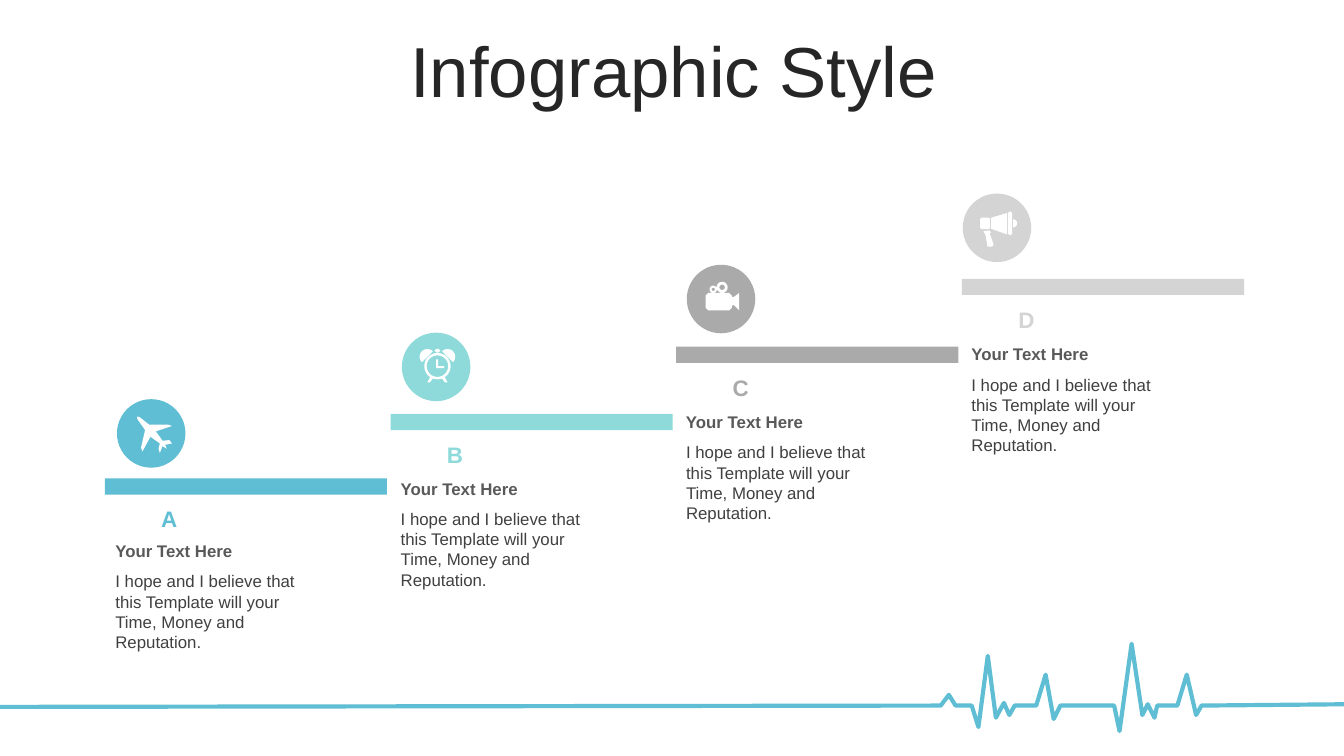
from math import cos, radians, sin

from lxml.etree import SubElement
from pptx import Presentation
from pptx.dml.color import RGBColor
from pptx.enum.shapes import MSO_SHAPE
from pptx.enum.text import MSO_ANCHOR, MSO_AUTO_SIZE, PP_ALIGN
from pptx.oxml.ns import qn
from pptx.util import Inches, Pt

BLUE = RGBColor(0x60, 0xBE, 0xD4)
AQUA = RGBColor(0x8E, 0xDA, 0xDA)
GRAY = RGBColor(0xAA, 0xAA, 0xAA)
SILVER = RGBColor(0xD4, 0xD4, 0xD4)
WHITE = RGBColor(0xFF, 0xFF, 0xFF)
TITLE_COLOR = RGBColor(0x26, 0x26, 0x26)
HEADING_COLOR = RGBColor(0x59, 0x59, 0x59)
BODY_COLOR = RGBColor(0x40, 0x40, 0x40)

# The grid has 100 columns; its cells are square
COLUMNS, ROWS = 100, 56.25
CELL = Inches(0.1)
BODY = "I hope and I believe that this Template will your Time, Money and Reputation."


def cells(count):
    return round(count * CELL)


def arc(x, y, radius, start=0, end=360):
    """Points along an arc, angles in degrees clockwise from the right."""
    angles = [radians(start + (end - start) * i / 36) for i in range(37)]
    return [(x + radius * cos(angle), y + radius * sin(angle)) for angle in angles]


def box(left, top, right, bottom, cut=0.1):
    """A rectangle with slightly cut corners."""
    return [(left + cut, top), (right - cut, top), (right, top + cut),
            (right, bottom - cut), (right - cut, bottom), (left + cut, bottom),
            (left, bottom - cut), (left, top + cut)]


# Icon outlines in cells, measured from the centre of the disc
PLANE = [[(1.55, 0.75), (1.05, 0.85), (1.15, 1.15), (0.85, 0.95), (0.65, 1.45),
          (0.55, 1.15), (0.65, 0.75), (-0.05, 0.25), (-0.65, 1.35), (-0.75, 1.05),
          (-0.45, -0.25), (-1.05, -1.1), (-1.05, -1.25), (-0.85, -1.2),
          (-0.15, -0.65), (1.25, -0.65), (1.55, -0.55), (0.35, -0.15),
          (0.85, 0.55), (1.35, 0.5)]]
CLOCK = [
    arc(0.1, -0.05, 0.98), arc(0.1, -0.05, 0.8),
    arc(-0.65, -0.75, 0.57, 135, 315), arc(0.85, -0.75, 0.57, -135, 45),
    [(0, -0.55), (0.15, -0.55), (0.15, -0.05), (0.6, -0.05), (0.6, 0.1), (0, 0.1)],
    [(0.65, 0.78), (0.85, 1.15), (0.65, 1.15), (0.45, 0.88)],
    [(-0.45, 0.78), (-0.65, 1.15), (-0.45, 1.15), (-0.25, 0.88)],
    box(-0.1, -1.33, 0.3, -1.08),
]
CAMERA = [
    arc(-0.58, -0.72, 0.27), arc(-0.58, -0.72, 0.12),
    arc(0.08, -0.87, 0.41), arc(0.08, -0.87, 0.2),
    box(-1.15, -0.45, 0.8, 0.85, 0.2),
    [(0.8, -0.15), (0.95, -0.15), (1.35, -0.45), (1.35, 0.85), (0.95, 0.45), (0.8, 0.5)],
]
MEGAPHONE = [
    [(-0.55, 0.2), (-0.45, 0.35), (-0.55, 0.4), (-0.25, 1.25), (-0.35, 1.4),
     (-0.7, 1.4), (-0.85, 0.55), (-1, 0.25)],
    box(-1.25, -0.75, -0.5, 0.1),
    [(-0.43, -0.75), (0.75, -1.1), (0.75, 0.5), (-0.43, 0.08)],
    box(0.83, -1.2, 1.12, 0.55),
    arc(1.2, -0.33, 0.3, -90, 90),
]
HEARTBEAT = [(100, 52.4), (89.4, 52.5), (89, 53.2), (88.3, 50.2), (87.6, 52.5),
             (86.1, 52.5), (85.9, 53.4), (85.4, 52.4), (85, 53.2), (84.2, 47.9),
             (83.3, 54.4), (82.9, 52.5), (78.9, 52.5), (78.4, 53.5), (77.8, 50.2),
             (77.1, 52.5), (75.5, 52.5), (75.1, 53.2), (74.7, 52.3), (74.1, 53.4),
             (73.5, 48.8), (72.8, 54.1), (72.3, 52.5), (71.1, 52.5), (70.6, 51.7),
             (70, 52.5), (-0.2, 52.6)]


class StepSlide:
    font = "Arial"
    disc_size = 5.1

    def __init__(self, presentation):
        self.slide = presentation.slides.add_slide(presentation.slide_layouts[5])
        self.shapes = self.slide.shapes

    def format_text(self, frame, text, size, color, bold=False, align=PP_ALIGN.LEFT):
        frame.text = text
        frame.word_wrap = True
        paragraph = frame.paragraphs[0]
        paragraph.alignment = align
        font = paragraph.runs[0].font
        font.name, font.size, font.bold = self.font, Pt(size), bold
        font.color.rgb = color
        return paragraph

    def set_insets(self, frame):
        frame.margin_left = frame.margin_right = Inches(0.07)
        frame.margin_top = frame.margin_bottom = Inches(0.04)

    def title(self, text, left, top, width, height):
        shape = self.shapes.title
        shape.left, shape.top = cells(left), cells(top)
        shape.width, shape.height = cells(width), cells(height)
        frame = shape.text_frame
        paragraph = self.format_text(frame, text, 37.9, TITLE_COLOR, align=PP_ALIGN.CENTER)
        paragraph.line_spacing, paragraph.space_before = 0.8, Pt(7.5)
        frame.auto_size = MSO_AUTO_SIZE.NONE
        frame.vertical_anchor = MSO_ANCHOR.MIDDLE
        self.set_insets(frame)

    def text(self, text, left, top, width, height, size, color, bold=False):
        shape = self.shapes.add_textbox(*map(cells, (left, top, width, height)))
        self.format_text(shape.text_frame, text, size, color, bold)
        return shape

    def letter(self, text, left, top, color):
        shape = self.text(text, left, top, 9.6, 2.8, 12, color, True)
        shape.text_frame.paragraphs[0].alignment = PP_ALIGN.CENTER
        self.set_insets(shape.text_frame)

    def paint(self, shape, color):
        shape.shadow.inherit = False
        shape.fill.solid()
        shape.fill.fore_color.rgb = color
        shape.line.fill.background()

    def preset(self, kind, left, top, width, height, color):
        self.paint(self.shapes.add_shape(kind, *map(cells, (left, top, width, height))), color)

    def outline(self, contours, x=0, y=0, close=True):
        builder = None
        for contour in contours:
            points = [(cells(x + dx), cells(y + dy)) for dx, dy in contour]
            if builder is None:
                builder = self.shapes.build_freeform(*points[0])
            else:
                builder.move_to(*points[0])
            builder.add_line_segments(points[1:], close=close)
        return builder.convert_to_shape()

    def heartbeat(self, points):
        shape = self.outline([points], close=False)
        shape.shadow.inherit = False
        shape.fill.background()
        shape.line.color.rgb = BLUE
        shape.line.width = Pt(2.25)
        line = shape.line._get_or_add_ln()
        line.set("cap", "rnd")
        SubElement(line, qn("a:round"))

    def badge(self, left, top, contours, color):
        self.preset(MSO_SHAPE.OVAL, left, top, self.disc_size, self.disc_size, color)
        radius = self.disc_size / 2
        self.paint(self.outline(contours, left + radius, top + radius), WHITE)

    def step(self, index, letter, color, bar_top, text_top, disc, icon):
        bar_left = 7.8 + 21.26 * index
        text_left = 7.6 + 21.23 * index
        self.preset(MSO_SHAPE.RECTANGLE, bar_left, bar_top, 21, 1.2, color)
        self.letter(letter, bar_left, bar_top + 1.62, color)
        self.text(BODY, text_left, text_top + 2.25, 15.8, 7.1, 9, BODY_COLOR)
        self.text("Your Text Here", text_left, text_top, 15.6, 2.5, 9, HEADING_COLOR, True)
        self.badge(*disc, icon, color)


def main():
    presentation = Presentation()
    presentation.slide_width = cells(COLUMNS)
    presentation.slide_height = cells(ROWS)
    page = StepSlide(presentation)

    # Title and pulse line
    page.heartbeat(HEARTBEAT)
    page.title("Infographic Style", 2.7, 2.8, 94.9, 5.9)

    # Rising steps: letter, colour, bar top, text top, disc corner, icon
    steps = [
        ("A", BLUE, 35.6, 39.75, (8.7, 29.7), PLANE),
        ("B", AQUA, 30.8, 35.1, (29.9, 24.75), CLOCK),
        ("C", GRAY, 25.8, 30.15, (51.1, 19.7), CAMERA),
        ("D", SILVER, 20.75, 25.1, (71.63, 14.4), MEGAPHONE),
    ]
    for index, step in enumerate(steps):
        page.step(index, *step)

    presentation.save("out.pptx")


if __name__ == "__main__":
    main()
